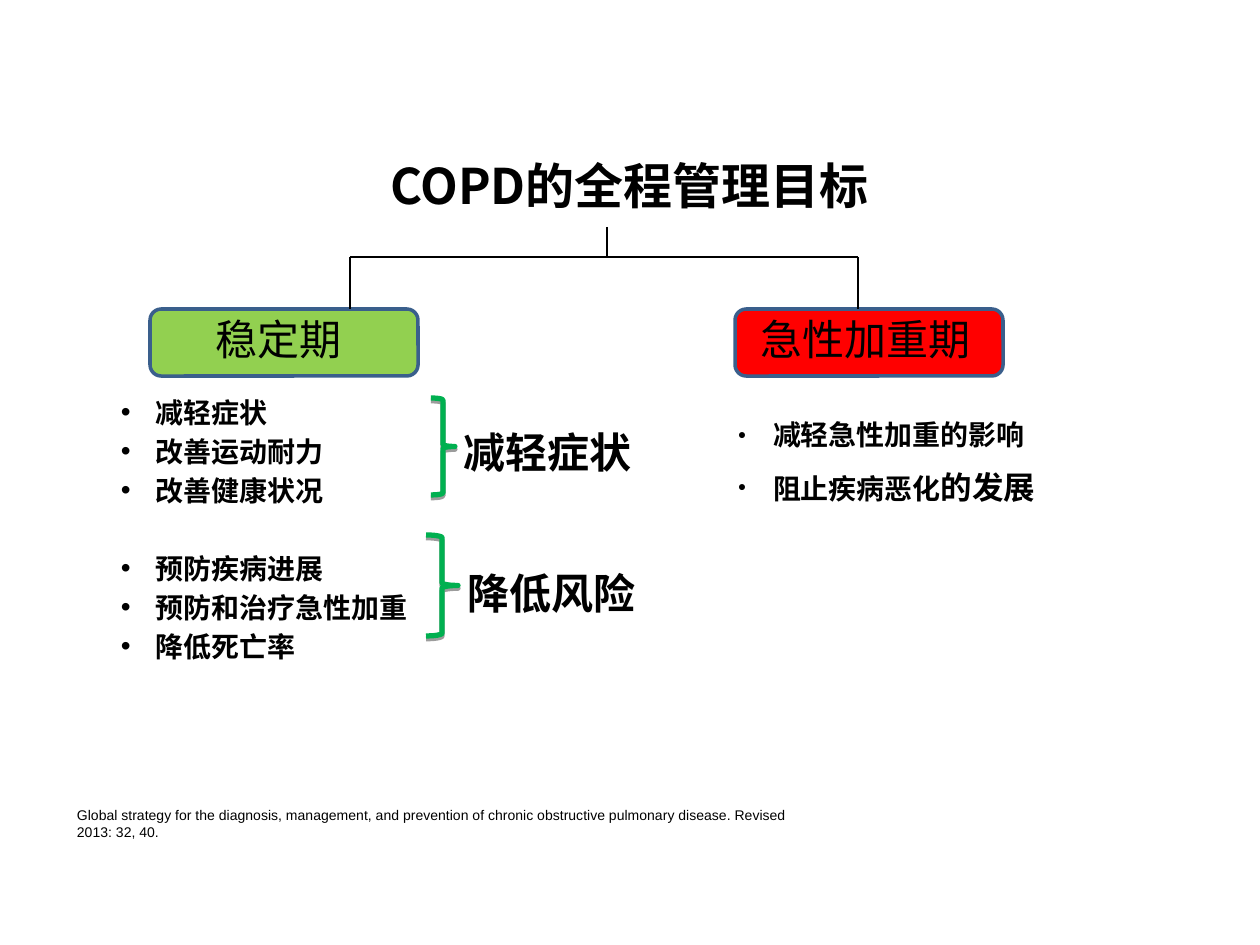
"""Build a slide on the whole-course management goals of COPD."""
from dataclasses import dataclass

from lxml import etree
from pptx import Presentation
from pptx import util as u
from pptx.dml.color import RGBColor
from pptx.enum import shapes, text
from pptx.oxml import ns


@dataclass(frozen=True)
class Theme:
    ink: str = "000000"
    stable: str = "92D050"
    acute: str = "FF0000"
    border: str = "3A5F8C"
    brace: str = "00B050"
    cjk: str = "Noto Sans CJK SC"
    label: str = "Calibri"
    latin: str = "Arial"
    title_size: int = 28
    head_size: int = 24
    large_size: int = 18
    body_size: int = 16
    note_size: int = 8


THEME = Theme()
PX = 914400 / 126
BUTTONS = [((150, 309, 268, 67), THEME.stable), ((735, 309, 268, 67), THEME.acute)]
HEADINGS = [("稳定期", (13, 272, 532, 134)), ("急性加重期", (600, 272, 532, 134))]
TITLE = ("COPD的全程管理目标", (220, 145, 819, 72))
STABLE_GOALS = [
    ["减轻症状", "改善运动耐力", "改善健康状况"],
    ["预防疾病进展", "预防和治疗急性加重", "降低死亡率"],
]
ACUTE_GOALS = [
    [("减轻急性加重的影响", THEME.body_size)],
    [("阻止疾病恶化", THEME.body_size), ("的发展", THEME.large_size)],
]
SUMMARIES = [
    ("减轻症状", (451, 421, 204, 63), (431, 398, 24, 97)),
    ("降低风险", (455, 562, 204, 63), (426, 535, 32, 101)),
]
SOURCE = (
    "Global strategy for the diagnosis, management, and prevention of chronic "
    "obstructive pulmonary disease. Revised 2013: 32, 40."
)
TREE = {"stem": 607, "top": 227, "bar": 257, "bottom": 309, "branches": (350, 858)}


def px(*values):
    return [round(value * PX) for value in values]


def set_all(target, values):
    for name, value in values.items():
        setattr(target, name, value)


def add_element(parent, tag, **attributes):
    return etree.SubElement(parent, ns.qn(tag), attributes)


def add_box(slide, area, anchor=text.MSO_ANCHOR.TOP, inset=(13, 6)):
    frame = slide.shapes.add_textbox(*px(*area)).text_frame
    side, edge = px(*inset)
    set_all(frame, {
        "word_wrap": True, "vertical_anchor": anchor,
        "margin_left": side, "margin_right": side,
        "margin_top": edge, "margin_bottom": edge,
    })
    return frame


def add_span(para, words, size, face=THEME.cjk, bold=False):
    span = para.add_run()
    span.text = words
    set_all(span.font, {"size": u.Pt(size), "name": face, "bold": bold})
    span.font.color.rgb = RGBColor.from_string(THEME.ink)
    add_element(span.font._element, "a:ea", typeface=face)


def add_line(slide, *ends):
    line = slide.shapes.add_connector(shapes.MSO_CONNECTOR.STRAIGHT, *px(*ends))
    line.line.width = u.Pt(0.75)
    line.line.color.rgb = RGBColor.from_string(THEME.ink)
    add_element(line._element.spPr, "a:effectLst")


def add_outline(slide, kind, area, color, width):
    shape = slide.shapes.add_shape(kind, *px(*area))
    shape.shadow.inherit = False
    shape.line.width = u.Pt(width)
    shape.line.color.rgb = RGBColor.from_string(color)
    return shape


def add_button(slide, area, color):
    kind = shapes.MSO_SHAPE.ROUNDED_RECTANGLE
    button = add_outline(slide, kind, area, THEME.border, 2)
    button.fill.solid()
    button.fill.fore_color.rgb = RGBColor.from_string(color)


def add_brace(slide, area):
    kind = shapes.MSO_SHAPE.RIGHT_BRACE
    brace = add_outline(slide, kind, area, THEME.brace, 3)
    brace.fill.background()
    effects = brace._element.spPr.find(ns.qn("a:effectLst"))
    shadow = add_element(effects, "a:outerShdw", blurRad="0",
                         dist=str(u.Pt(1.6)), dir="5400000", rotWithShape="0")
    color = add_element(shadow, "a:srgbClr", val=THEME.ink)
    add_element(color, "a:alpha", val="38000")


def add_bullets(frame, items, indent, spacing, gaps, mark, scale):
    left, hang = px(*indent)
    for index, (spans, gap) in enumerate(zip(items, gaps)):
        para = frame.add_paragraph() if index else frame.paragraphs[0]
        set_all(para, {"line_spacing": u.Pt(spacing), "space_before": u.Pt(gap)})
        props = para._p.get_or_add_pPr()
        props.set("marL", str(left))
        props.set("indent", str(-hang))
        add_element(add_element(props, "a:buClr"), "a:srgbClr", val=THEME.ink)
        add_element(props, "a:buSzPct", val=str(scale * 1000))
        add_element(props, "a:buFont", typeface=THEME.latin)
        add_element(props, "a:buChar", char=mark)
        for words, size in spans:
            add_span(para, words, size, bold=True)


def add_tree(slide):
    stem, top, bar, bottom = (TREE[key] for key in ("stem", "top", "bar", "bottom"))
    left, right = TREE["branches"]
    add_line(slide, stem, top, stem, bar)
    add_line(slide, left, bar, right, bar)
    for branch in TREE["branches"]:
        add_line(slide, branch, bar, branch, bottom)


def main():
    deck = Presentation()
    set_all(deck, {"slide_width": u.Inches(10), "slide_height": u.Inches(7.5)})
    slide = deck.slides.add_slide(deck.slide_layouts[6])

    for area, color in BUTTONS:
        add_button(slide, area, color)
    for words, area in HEADINGS:
        para = add_box(slide, area, text.MSO_ANCHOR.MIDDLE).paragraphs[0]
        para.alignment = text.PP_ALIGN.CENTER
        add_span(para, words, THEME.head_size)

    words, area = TITLE
    para = add_box(slide, area).paragraphs[0]
    set_all(para, {"alignment": text.PP_ALIGN.CENTER, "line_spacing": u.Pt(36)})
    add_span(para, words, THEME.title_size, bold=True)
    add_tree(slide)

    acute = add_box(slide, (712, 391, 387, 171))
    add_bullets(acute, ACUTE_GOALS, (48, 35), 31, (0, 0), "●", 50)

    stable = add_box(slide, (112, 391, 670, 465), inset=(9, 5))
    goals = [[(goal, THEME.body_size)] for group in STABLE_GOALS for goal in group]
    gaps = [
        0 if group == row == 0 else 3.3 if row else 25.6
        for group, members in enumerate(STABLE_GOALS)
        for row in range(len(members))
    ]
    add_bullets(stable, goals, (35, 35), 19, gaps, "•", 100)

    for words, area, brace in SUMMARIES:
        add_brace(slide, brace)
        para = add_box(slide, area).paragraphs[0]
        add_span(para, words, THEME.head_size, THEME.label, True)

    para = add_box(slide, (64, 801, 770, 47)).paragraphs[0]
    add_span(para, SOURCE, THEME.note_size, THEME.latin)
    deck.save("out.pptx")


if __name__ == "__main__":
    main()
